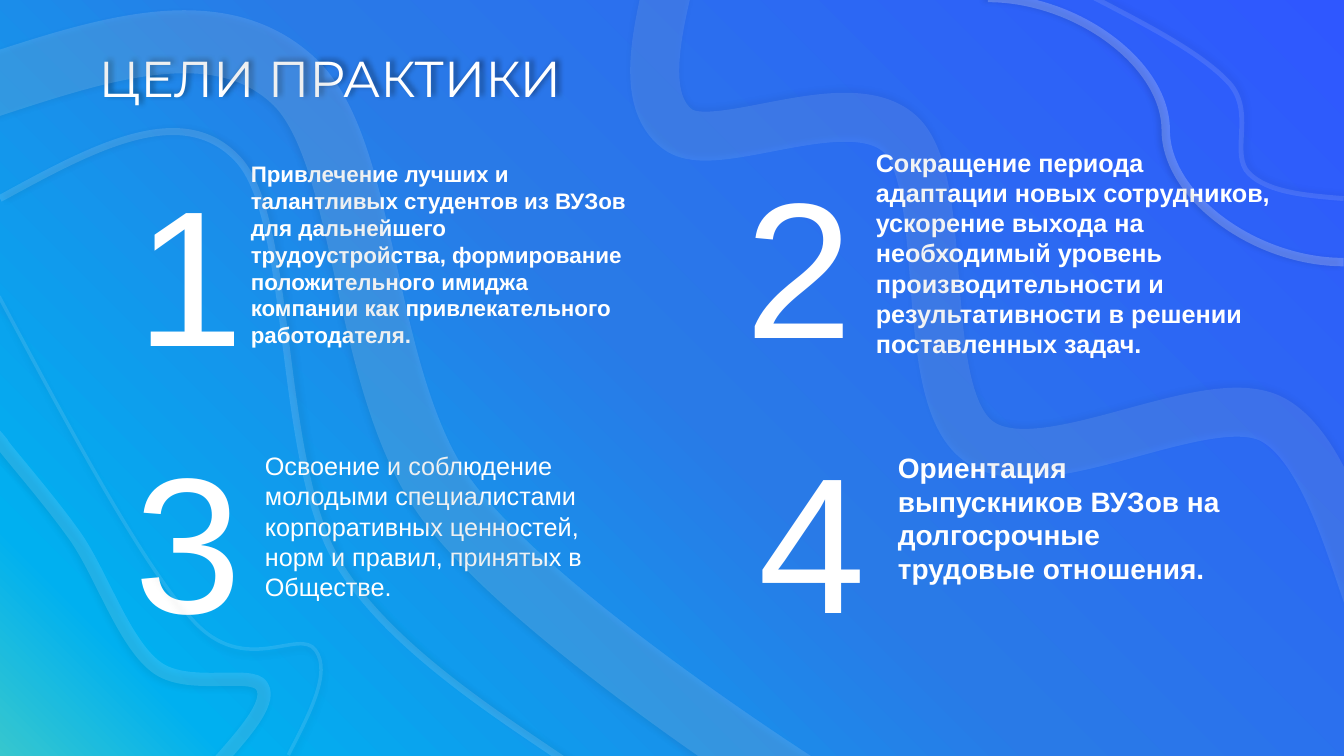
import pptx
import pptx.dml.color
import pptx.enum.shapes
import pptx.enum.text
import pptx.oxml
import pptx.oxml.ns
import pptx.util

WHITE = pptx.dml.color.RGBColor(0xFF, 0xFF, 0xFF)
PALE_BLUE = pptx.dml.color.RGBColor(0xDE, 0xEB, 0xF7)
BLACK = pptx.dml.color.RGBColor(0x00, 0x00, 0x00)
VIOLET_BLUE = pptx.dml.color.RGBColor(0x2F, 0x57, 0xFF)
MID_BLUE = pptx.dml.color.RGBColor(0x29, 0x7A, 0xE7)
SKY = pptx.dml.color.RGBColor(0x00, 0xB0, 0xF0)
TURQUOISE = pptx.dml.color.RGBColor(0x36, 0xC7, 0xCE)
BACKGROUND = [(0, VIOLET_BLUE), (50, MID_BLUE), (89, SKY), (100, TURQUOISE)]

# Goals: number place, text place (left, top, width, height), size, bold, text
GOALS = [
    ((1.26, 1.47, 1.26, 2.42), (2.39, 1.54, 3.97, 1.99), 16, True,
     "Привлечение лучших и талантливых студентов из ВУЗов для дальнейшего трудоустройства, "
     "формирование положительного имиджа компании как привлекательного работодателя."),
    ((7.3, 1.39, 1.29, 2.42), (8.59, 1.41, 4.21, 1.92), 18, True,
     "Сокращение периода адаптации новых сотрудников, ускорение выхода на необходимый уровень "
     "производительности и результативности в решении поставленных задач."),
    ((1.24, 4.12, 1.29, 2.42), (2.53, 4.42, 3.65, 1.62), 18, False,
     "Освоение и соблюдение молодыми специалистами корпоративных ценностей, норм и правил, "
     "принятых в Обществе."),
    ((7.43, 4.12, 1.29, 2.42), (8.81, 4.42, 3.48, 1.45), 20, True,
     "Ориентация выпускников ВУЗов на долгосрочные трудовые отношения."),
]

# Waves: colour, width, opacity, shadow angle, place, start point, Bezier segments
WAVES_BELOW = [
    (PALE_BLUE, 45, 14, 135, (-0.12, 0.41, 8.1, 7.42), (-0.12, 0.86),
     [(1.01, 0.49, 2.15, 0.11, 2.9, 0.79), (3.66, 1.47, 3.57, 3.76, 4.42, 4.94),
      (5.27, 6.11, 7.98, 7.83, 7.98, 7.83)]),
    (PALE_BLUE, 35, 11, 270, (6.49, -0.4, 7.36, 6.69), (6.69, -0.4),
     [(6.52, 0.29, 6.34, 0.99, 6.72, 1.28), (7.09, 1.57, 8.45, 0.84, 8.95, 1.35),
      (9.44, 1.87, 9.09, 3.91, 9.7, 4.37), (10.31, 4.84, 11.93, 3.84, 12.6, 4.15),
      (13.27, 4.47, 13.54, 6.11, 13.73, 6.26), (13.93, 6.42, 13.85, 5.76, 13.77, 5.1)]),
    (WHITE, 5, 13, 0, (0, 1.31, 6.19, 6.7), (0, 1.97),
     [(0.9, 1.48, 1.8, 0.98, 2.36, 1.58), (2.92, 2.18, 2.74, 4.52, 3.34, 5.56),
      (3.94, 6.59, 5.5, 7.42, 5.93, 7.79), (6.37, 8.16, 6.16, 7.97, 5.95, 7.79)]),
]
WAVES_ABOVE = [
    (WHITE, 9.5, 13, 135, (-0.06, 4.31, 2.68, 3.32), (2.11, 7.63),
     [(2.4, 7.3, 2.7, 6.98, 2.6, 6.81), (2.51, 6.64, 1.85, 6.86, 1.54, 6.61),
      (1.23, 6.37, 1.01, 5.71, 0.76, 5.34), (0.5, 4.97, 0.13, 4.55, 0.01, 4.39),
      (-0.12, 4.24, -0.04, 4.32, 0.03, 4.41)]),
    (WHITE, 2.5, 11, 90, (-0.01, 2.94, 3.19, 4.55), (2.86, 7.49),
     [(3.07, 7.08, 3.29, 6.67, 3.13, 6.45), (2.97, 6.22, 2.43, 6.73, 1.91, 6.15),
      (1.39, 5.57, 0.69, 4.25, -0.01, 2.94)]),
    (WHITE, 3.5, 11, 315, (10.86, -0.02, 2.47, 1.99), (10.86, -0.02),
     [(11.4, 0.26, 11.94, 0.54, 12.2, 0.83), (12.45, 1.12, 12.2, 1.53, 12.39, 1.72),
      (12.58, 1.91, 12.96, 1.94, 13.33, 1.97)]),
]


def length(inches):
    return pptx.util.Cm(inches * 2.54)


def element(markup):
    namespace = pptx.oxml.ns.nsdecls("a")
    return pptx.oxml.parse_xml(markup.replace(">", f" {namespace}>", 1))


def write(box, text, font="Arial", size=18, bold=False, color=WHITE):
    frame = box.text_frame
    frame.word_wrap = True
    frame.auto_size = pptx.enum.text.MSO_AUTO_SIZE.SHAPE_TO_FIT_TEXT
    span = frame.paragraphs[0].add_run()
    span.text = text
    span.font.name = font
    span.font.size = pptx.util.Pt(size)
    span.font.bold = bold
    span.font.color.rgb = color


class GoalsPage:
    def __init__(self, deck):
        self.page = deck.slides.add_slide(deck.slide_layouts[6])

    def background(self, stops):
        self.page.background.fill.solid()
        properties = self.page._element.find(".//" + pptx.oxml.ns.qn("p:bgPr"))
        marks = "".join(f'<a:gs pos="{place * 1000}"><a:srgbClr val="{color}"/></a:gs>'
                        for place, color in stops)
        properties.replace(properties[0], element(
            f'<a:gradFill><a:gsLst>{marks}</a:gsLst><a:path path="circle">'
            '<a:fillToRect l="100000" b="100000"/></a:path></a:gradFill>'))

    def group(self):
        return self.page.shapes.add_group_shape().shapes

    def text(self, shapes, place, text, **style):
        box = shapes.add_textbox(*map(length, place))
        write(box, text, **style)
        return box

    def shadow(self, shape, angle):
        blur, distance = pptx.util.Pt(4), pptx.util.Pt(3)
        shape._element.spPr.append(element(
            f'<a:effectLst><a:outerShdw blurRad="{blur}" dist="{distance}" dir="{angle * 60000}" '
            f'algn="ctr" rotWithShape="0"><a:srgbClr val="{BLACK}"><a:alpha val="40000"/>'
            '</a:srgbClr></a:outerShdw></a:effectLst>'))

    def stroke(self, shape, color, width, opacity, angle):
        shape.line.color.rgb = color
        shape.line.width = pptx.util.Pt(width)
        tint = shape._element.spPr.find(".//" + pptx.oxml.ns.qn("a:ln")).find(
            ".//" + pptx.oxml.ns.qn("a:srgbClr"))
        tint.append(element(f'<a:alpha val="{opacity * 1000}"></a:alpha>'))
        self.shadow(shape, angle)

    def wave(self, shapes, color, width, opacity, angle, place, start, segments):
        left, top, wide, high = map(length, place)
        builder = shapes.build_freeform(*map(length, start), scale=1.0)
        builder.add_line_segments([tuple(map(length, segment[4:])) for segment in segments],
                                  close=False)
        shape = builder.convert_to_shape()
        shape.left, shape.top, shape.width, shape.height = left, top, wide, high

        # Turn the straight outline into Bezier segments
        def points(values):
            return "".join(f'<a:pt x="{length(x) - left}" y="{length(y) - top}"/>'
                           for x, y in zip(values[::2], values[1::2]))

        curves = "".join(f"<a:cubicBezTo>{points(segment)}</a:cubicBezTo>"
                         for segment in segments)
        outline = shape._element.spPr.find(".//" + pptx.oxml.ns.qn("a:pathLst"))
        outline.replace(outline[0], element(
            f'<a:path w="{wide}" h="{high}"><a:moveTo>{points(start)}</a:moveTo>{curves}</a:path>'))
        shape.fill.background()
        self.stroke(shape, color, width, opacity, angle)

    def curve(self, shapes, start, end, color, width, opacity, angle):
        connector = shapes.add_connector(
            pptx.enum.shapes.MSO_CONNECTOR.CURVE, *map(length, start + end))
        self.stroke(connector, color, width, opacity, angle)


def main():
    deck = pptx.Presentation()
    deck.slide_width, deck.slide_height = length(13.333), length(7.5)
    goals_page = GoalsPage(deck)
    goals_page.background(BACKGROUND)

    # Title
    title = goals_page.text(goals_page.page.shapes, (0.88, 0.42, 5.62, 0.71),
                            "ЦЕЛИ ПРАКТИКИ", font="Montserrat", size=36)
    title.fill.background()
    goals_page.shadow(title, 315)

    # Numbered goals
    for number, (number_place, text_place, size, bold, text) in enumerate(GOALS, 1):
        goal = goals_page.group()
        goals_page.text(goal, text_place, text, size=size, bold=bold)
        goals_page.text(goal, number_place, str(number), size=138)

    # Translucent waves over the page
    waves = goals_page.group()
    for wave in WAVES_BELOW:
        goals_page.wave(waves, *wave)
    goals_page.curve(waves, (9.8, -0.02), (13.33, 2.6), WHITE, 6, 22, 180)
    for wave in WAVES_ABOVE:
        goals_page.wave(waves, *wave)

    deck.save("out.pptx")


if __name__ == "__main__":
    main()
